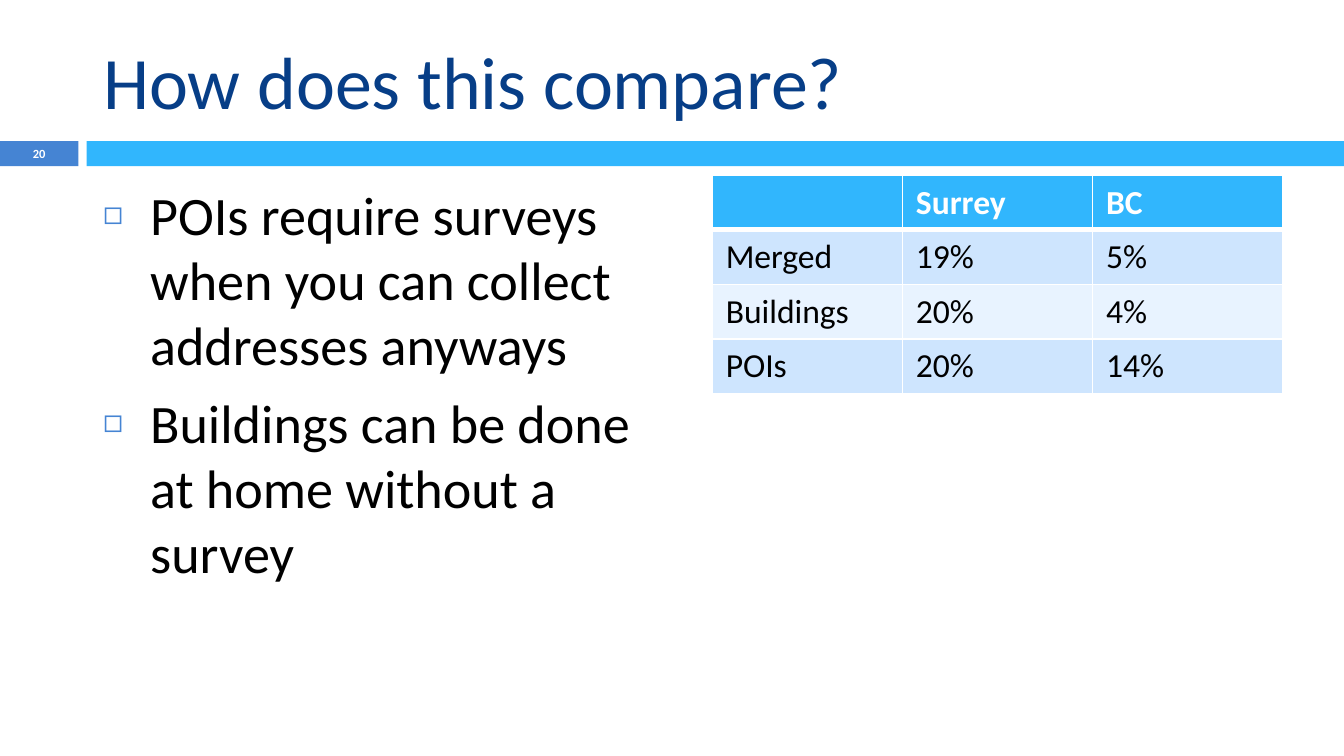
"""Build a slide that compares survey coverage in Surrey and BC."""
from dataclasses import dataclass

from lxml import etree
from pptx import Presentation
from pptx.dml.color import RGBColor
from pptx.enum.shapes import MSO_SHAPE
from pptx.enum.text import MSO_ANCHOR, MSO_AUTO_SIZE, PP_ALIGN
from pptx.oxml.ns import qn
from pptx.util import Inches, Pt

RECT = MSO_SHAPE.RECTANGLE
MIDDLE, TOP = MSO_ANCHOR.MIDDLE, MSO_ANCHOR.TOP
LEFT, CENTER = PP_ALIGN.LEFT, PP_ALIGN.CENTER
NO_FIT = MSO_AUTO_SIZE.NONE
FONT = "Calibri"
SLIDE_W = Inches(10)
SLIDE_H = SLIDE_W * 9 // 16
COLORS = {
    "title": "073E87", "text": "000000", "white": "FFFFFF",
    "accent": "4584D3", "bar": "31B6FD",
    "band_dark": "CEE5FE", "band_light": "E8F3FF",
}


@dataclass(frozen=True)
class Box:
    """A rectangle in percent of the slide's width and height."""
    x: float
    y: float
    w: float
    h: float

    def emu(self) -> tuple[int, int, int, int]:
        """Return left, top, width and height in EMU."""
        return (round(SLIDE_W * self.x / 100), round(SLIDE_H * self.y / 100),
                round(SLIDE_W * self.w / 100), round(SLIDE_H * self.h / 100))


@dataclass(frozen=True)
class Bar:
    """A filled strip under the title."""
    box: Box
    color: str


@dataclass(frozen=True)
class Style:
    """Size, colour and weight of a run."""
    size: float
    color: str
    bold: bool = False


BARS = (Bar(Box(0, 18.67, 5.83, 3.33), "accent"),
        Bar(Box(6.45, 18.67, 93.55, 3.33), "bar"))
TITLE_BOX = Box(6.67, 3.38, 89.2, 14.4)
BODY_BOX = Box(6.67, 23.11, 42.5, 66.67)
TABLE_BOX = Box(53, 23.2, 42.45, 28.8)
NUMBER_BOX = Box(0, 18.52, 5.83, 3.56)
POINTS = ("POIs require surveys when you can collect addresses anyways",
          "Buildings can be done at home without a survey")
ROWS = (("", "Surrey", "BC"),
        ("Merged", "19%", "5%"),
        ("Buildings", "20%", "4%"),
        ("POIs", "20%", "14%"))


def rgb(name: str) -> RGBColor:
    """Look up a colour by name."""
    return RGBColor.from_string(COLORS[name])


def add_run(p, text: str, style: Style) -> None:
    """Add one formatted run to a paragraph."""
    r = p.add_run()
    r.text = text
    r.font.name = FONT
    r.font.size = Pt(style.size)
    r.font.bold = style.bold
    r.font.color.rgb = rgb(style.color)


def place(sp, box: Box, anchor):
    """Move a text shape into its box and return its text frame."""
    sp.left, sp.top, sp.width, sp.height = box.emu()
    tf = sp.text_frame
    tf.word_wrap = True
    tf.auto_size = NO_FIT
    tf.vertical_anchor = anchor
    return tf


def add_bar(s, bar: Bar) -> None:
    """Draw a filled strip."""
    sp = s.shapes.add_shape(RECT, *bar.box.emu())
    sp.shadow.inherit = False
    sp.fill.solid()
    sp.fill.fore_color.rgb = rgb(bar.color)
    sp.line.fill.background()


def set_bullet(p) -> None:
    """Give a paragraph a hanging square bullet."""
    pPr = p._p.get_or_add_pPr()
    pPr.set("marL", str(Inches(0.35)))
    pPr.set("indent", str(-Inches(0.35)))
    clr = etree.SubElement(pPr, qn("a:buClr"))
    etree.SubElement(clr, qn("a:srgbClr"), val=COLORS["accent"])
    etree.SubElement(pPr, qn("a:buSzPct"), val="60000")
    etree.SubElement(pPr, qn("a:buChar"), char="◻")


def set_borders(cell, top: float, bottom: float) -> None:
    """Draw white borders round a cell, 1 pt at the sides."""
    tcPr = cell._tc.get_or_add_tcPr()
    for side, width in (("L", 1), ("R", 1), ("T", top), ("B", bottom)):
        ln = etree.SubElement(tcPr, qn(f"a:ln{side}"), w=str(Pt(width)))
        fill = etree.SubElement(ln, qn("a:solidFill"))
        etree.SubElement(fill, qn("a:srgbClr"), val=COLORS["white"])


def add_table(s) -> None:
    """Draw the comparison table with a header and banded rows."""
    n_rows, n_cols = len(ROWS), len(ROWS[0])
    table = s.shapes.add_table(n_rows, n_cols, *TABLE_BOX.emu()).table
    for i, row in enumerate(ROWS):
        header = i == 0
        style = Style(18, "white" if header else "text", header)
        color = "bar" if header else ("band_light", "band_dark")[i % 2]
        for j, text in enumerate(row):
            cell = table.cell(i, j)
            set_borders(cell, 3 if i == 1 else 1, 3 if header else 1)
            cell.fill.solid()
            cell.fill.fore_color.rgb = rgb(color)
            if text:
                add_run(cell.text_frame.paragraphs[0], text, style)


def main() -> None:
    """Build and save the slide."""
    prs = Presentation()
    prs.slide_width, prs.slide_height = SLIDE_W, SLIDE_H
    s = prs.slides.add_slide(prs.slide_layouts[1])
    for bar in BARS:
        add_bar(s, bar)

    p = place(s.shapes.title, TITLE_BOX, MIDDLE).paragraphs[0]
    p.alignment = LEFT
    add_run(p, "How does this compare?", Style(39.6, "title"))

    tf = place(s.placeholders[1], BODY_BOX, TOP)
    for i, text in enumerate(POINTS):
        p = tf.add_paragraph() if i else tf.paragraphs[0]
        p.space_before = Pt(7)
        set_bullet(p)
        add_run(p, text, Style(29, "text"))

    add_table(s)

    tf = place(s.shapes.add_textbox(*NUMBER_BOX.emu()), NUMBER_BOX, MIDDLE)
    tf.margin_left = tf.margin_right = tf.margin_top = tf.margin_bottom = 0
    p = tf.paragraphs[0]
    p.alignment = CENTER
    add_run(p, "20", Style(6.7, "white", True))
    prs.save("out.pptx")


if __name__ == "__main__":
    main()
